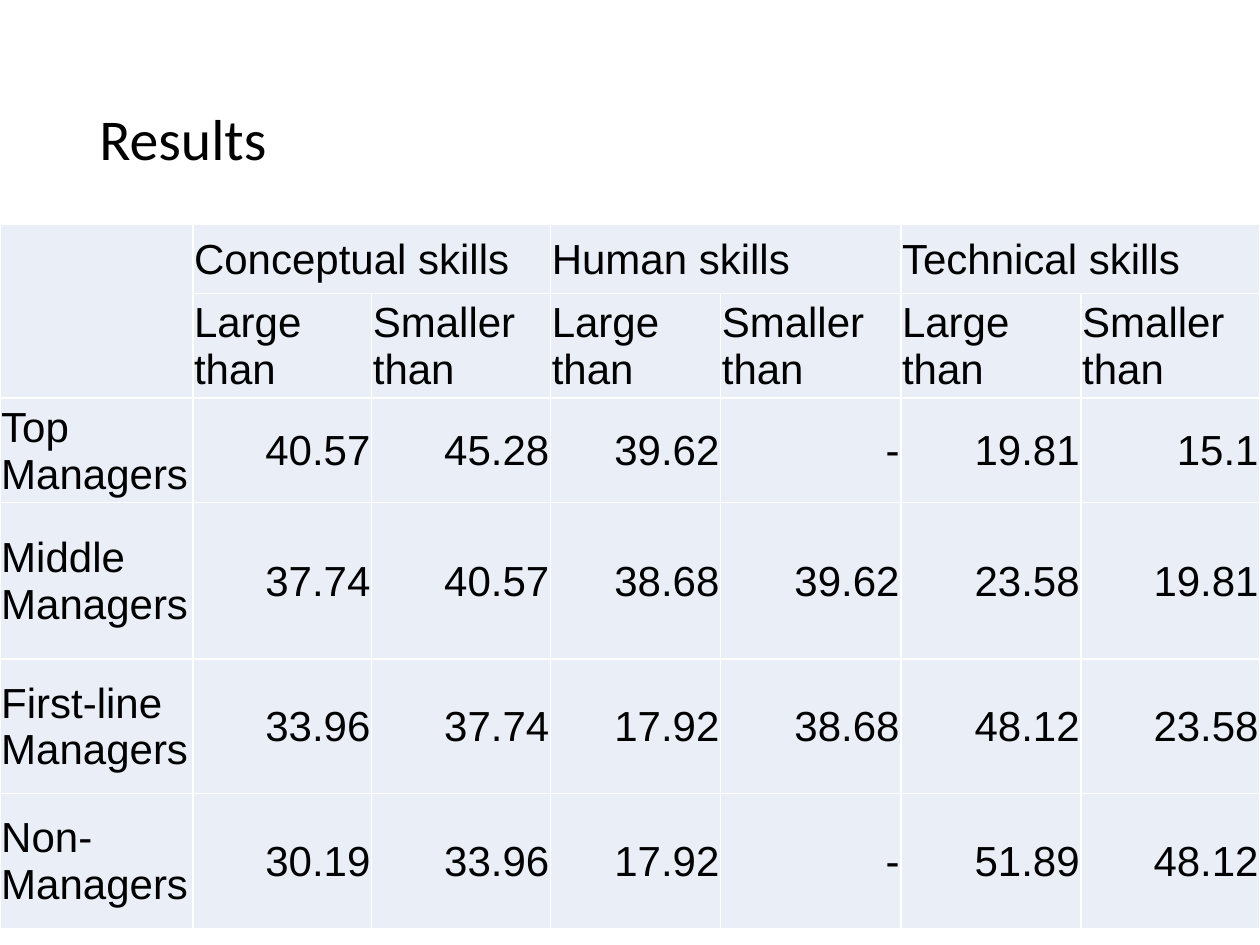
from dataclasses import dataclass

from lxml.etree import SubElement
from pptx import Presentation
from pptx.dml.color import RGBColor
from pptx.enum.text import MSO_ANCHOR, PP_ALIGN
from pptx.oxml.ns import qn
from pptx.util import Inches, Pt


@dataclass(frozen=True)
class Theme:
    ink: str = "000000"
    fill: str = "EAEFF7"
    rule: str = "FFFFFF"
    head: str = "Calibri"
    body: str = "Arial"
    big: int = 33
    size: int = 24
    line: int = 1


THEME = Theme()
COLS = [1.53, 1.42, 1.42, 1.35, 1.43, 1.43, 1.42]
ROWS = [0.55, 0.83, 0.83, 1.24, 1.07, 1.07]
DATA = [
    ["", "Conceptual skills", "", "Human skills", "", "Technical skills", ""],
    [""] + ["Large than", "Smaller than"] * 3,
    ["Top Managers", "40.57", "45.28", "39.62", "-", "19.81", "15.1"],
    ["Middle Managers", "37.74", "40.57", "38.68", "39.62", "23.58", "19.81"],
    ["First-line Managers", "33.96", "37.74", "17.92", "38.68", "48.12", "23.58"],
    ["Non-Managers", "30.19", "33.96", "17.92", "-", "51.89", "48.12"],
]


def set_font(para, name, size):
    para.font.name = name
    para.font.size = Pt(size)
    para.font.color.rgb = RGBColor.from_string(THEME.ink)


def add_title(slide, text):
    box = slide.shapes.add_textbox(Inches(0.69), Inches(0.4), Inches(8.62), Inches(1.45))
    frame = box.text_frame
    frame.word_wrap = True
    frame.vertical_anchor = MSO_ANCHOR.MIDDLE
    para = frame.paragraphs[0]
    para.text = text
    para.line_spacing = 0.9
    set_font(para, THEME.head, THEME.big)


def add_rules(cell):
    props = cell._tc.get_or_add_tcPr()
    for side in ("lnL", "lnR", "lnT", "lnB"):
        line = SubElement(props, qn(f"a:{side}"), w=str(Pt(THEME.line)))
        paint = SubElement(line, qn("a:solidFill"))
        SubElement(paint, qn("a:srgbClr"), val=THEME.rule)


def fill_cell(cell, text, align):
    add_rules(cell)
    cell.fill.solid()
    cell.fill.fore_color.rgb = RGBColor.from_string(THEME.fill)
    cell.vertical_anchor = MSO_ANCHOR.MIDDLE
    cell.margin_left = cell.margin_right = cell.margin_top = Inches(0.01)
    cell.margin_bottom = 0
    para = cell.text_frame.paragraphs[0]
    para.text = text
    para.alignment = align
    set_font(para, THEME.body, THEME.size)


def add_grid(slide):
    frame = slide.shapes.add_table(
        len(ROWS), len(COLS), 0, Inches(1.78), Inches(sum(COLS)), Inches(sum(ROWS)))
    table = frame.table
    for col, width in zip(table.columns, COLS):
        col.width = Inches(width)
    for row, height in zip(table.rows, ROWS):
        row.height = Inches(height)

    # Labels sit left, figures right
    for r, texts in enumerate(DATA):
        for c, text in enumerate(texts):
            align = PP_ALIGN.RIGHT if r > 1 and c > 0 else PP_ALIGN.LEFT
            fill_cell(table.cell(r, c), text, align)

    # Corner spans two rows, each skill two columns
    table.cell(0, 0).merge(table.cell(1, 0))
    for c in range(1, len(COLS), 2):
        table.cell(0, c).merge(table.cell(0, c + 1))


def main():
    deck = Presentation()
    deck.slide_width = Inches(10)
    deck.slide_height = Inches(7.5)
    slide = deck.slides.add_slide(deck.slide_layouts[6])
    add_title(slide, "Results")
    add_grid(slide)
    deck.save("out.pptx")


if __name__ == "__main__":
    main()
